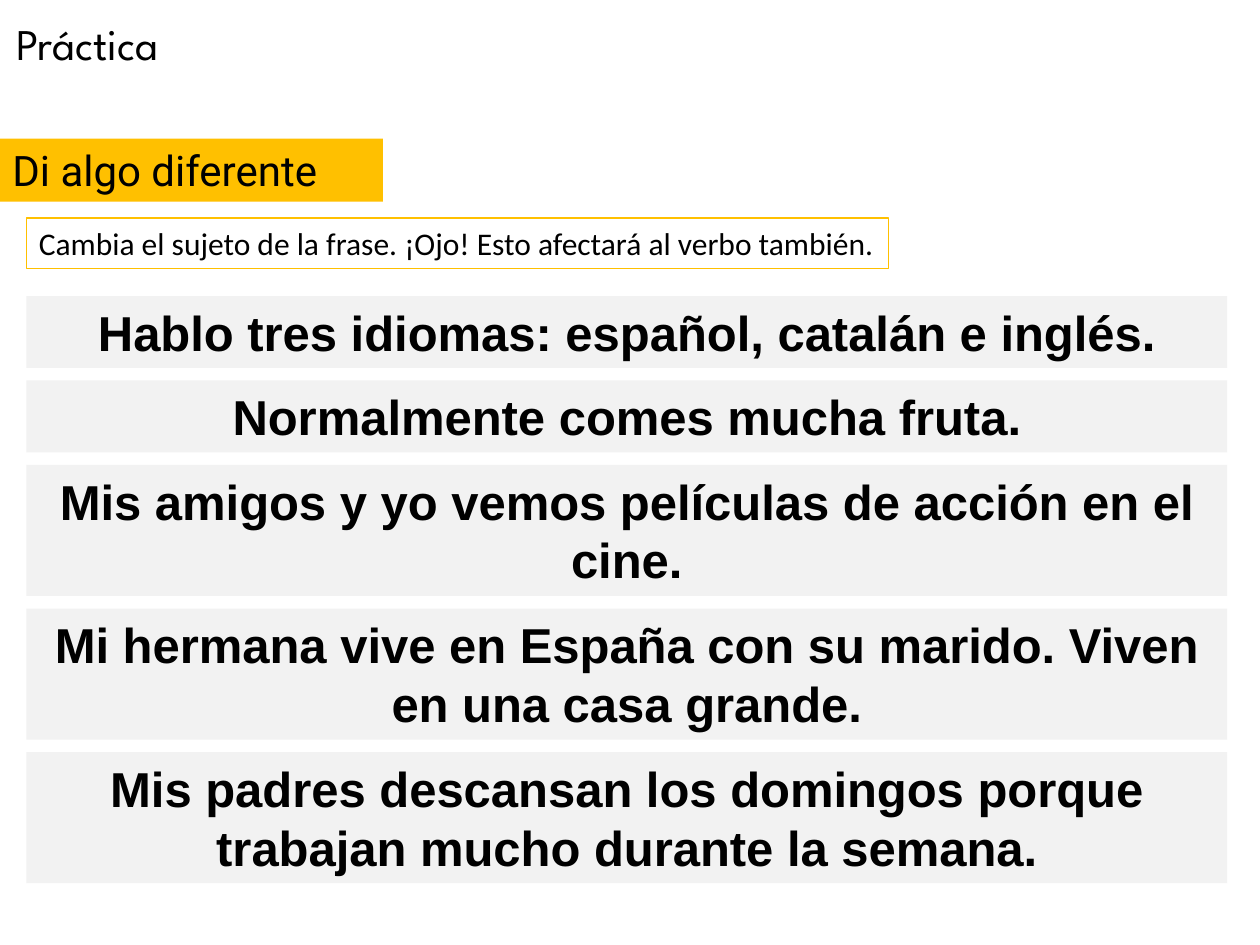
from pptx import Presentation
from pptx.dml.color import RGBColor
from pptx.enum.text import MSO_ANCHOR, MSO_AUTO_SIZE, PP_ALIGN
from pptx.util import Inches, Pt

BLACK = RGBColor(0x00, 0x00, 0x00)
AMBER = RGBColor(0xFF, 0xC0, 0x00)
PALE_GRAY = RGBColor(0xF2, 0xF2, 0xF2)

CELL = Inches(0.1)  # the slide is a grid of 100 columns by 75 rows
COLUMNS, ROWS = 100, 75
MARGIN = 2.1
SENTENCE_WIDTH = 95.3
FIRST_SENTENCE_ROW = 23.5
SENTENCE_GAP = 1
HEIGHT_BY_LINES = {1: 5.7, 2: 10.4}

# Each sentence with the number of lines it fills
SENTENCES = [
    ("Hablo tres idiomas: español, catalán e inglés.", 1),
    ("Normalmente comes mucha fruta.", 1),
    ("Mis amigos y yo vemos películas de acción en el cine.", 2),
    ("Mi hermana vive en España con su marido. Viven en una casa grande.", 2),
    ("Mis padres descansan los domingos porque trabajan mucho durante la semana.", 2),
]


def write_text(frame, text, font="Arial", size=28, bold=False,
               align=PP_ALIGN.LEFT, wrap=False):
    frame.word_wrap = wrap
    frame.auto_size = MSO_AUTO_SIZE.SHAPE_TO_FIT_TEXT
    frame.vertical_anchor = MSO_ANCHOR.TOP
    paragraph = frame.paragraphs[0]
    paragraph.alignment = align
    run = paragraph.add_run()
    run.text = text
    run.font.name = font
    run.font.size = Pt(size)
    run.font.bold = bold
    run.font.color.rgb = BLACK


class PracticeSlide:
    def __init__(self, presentation):
        self.slide = presentation.slides.add_slide(presentation.slide_layouts[6])

    def box(self, column, row, width, height, text, fill=None, line=None, **style):
        position = [int(cells * CELL) for cells in (column, row, width, height)]
        shape = self.slide.shapes.add_textbox(*position)
        if fill is not None:
            shape.fill.solid()
            shape.fill.fore_color.rgb = fill
        if line is not None:
            shape.line.color.rgb = line
            shape.line.width = Pt(0.75)
        write_text(shape.text_frame, text, **style)

    def title(self, text):
        self.box(0.3, 0.8, 16.4, 5.2, text, font="League Spartan", size=25)

    def banner(self, text):
        self.box(0, 11, 30.4, 5, text, fill=AMBER, font="Roboto", size=24)

    def instruction(self, text):
        self.box(MARGIN, 17.3, 68.4, 4, text, line=AMBER, font="Calibri", size=18)

    def sentences(self, items):
        row = FIRST_SENTENCE_ROW
        for text, lines in items:
            height = HEIGHT_BY_LINES[lines]
            self.box(MARGIN, row, SENTENCE_WIDTH, height, text, fill=PALE_GRAY,
                     bold=True, align=PP_ALIGN.CENTER, wrap=True)
            row += height + SENTENCE_GAP


def main():
    presentation = Presentation()
    presentation.slide_width = COLUMNS * CELL
    presentation.slide_height = ROWS * CELL
    practice = PracticeSlide(presentation)

    # Sentences to change
    practice.sentences(SENTENCES)

    # Headings and task
    practice.banner("Di algo diferente")
    practice.instruction(
        "Cambia el sujeto de la frase. ¡Ojo! Esto afectará al verbo también.")
    practice.title("Práctica")

    presentation.save("out.pptx")


if __name__ == "__main__":
    main()
